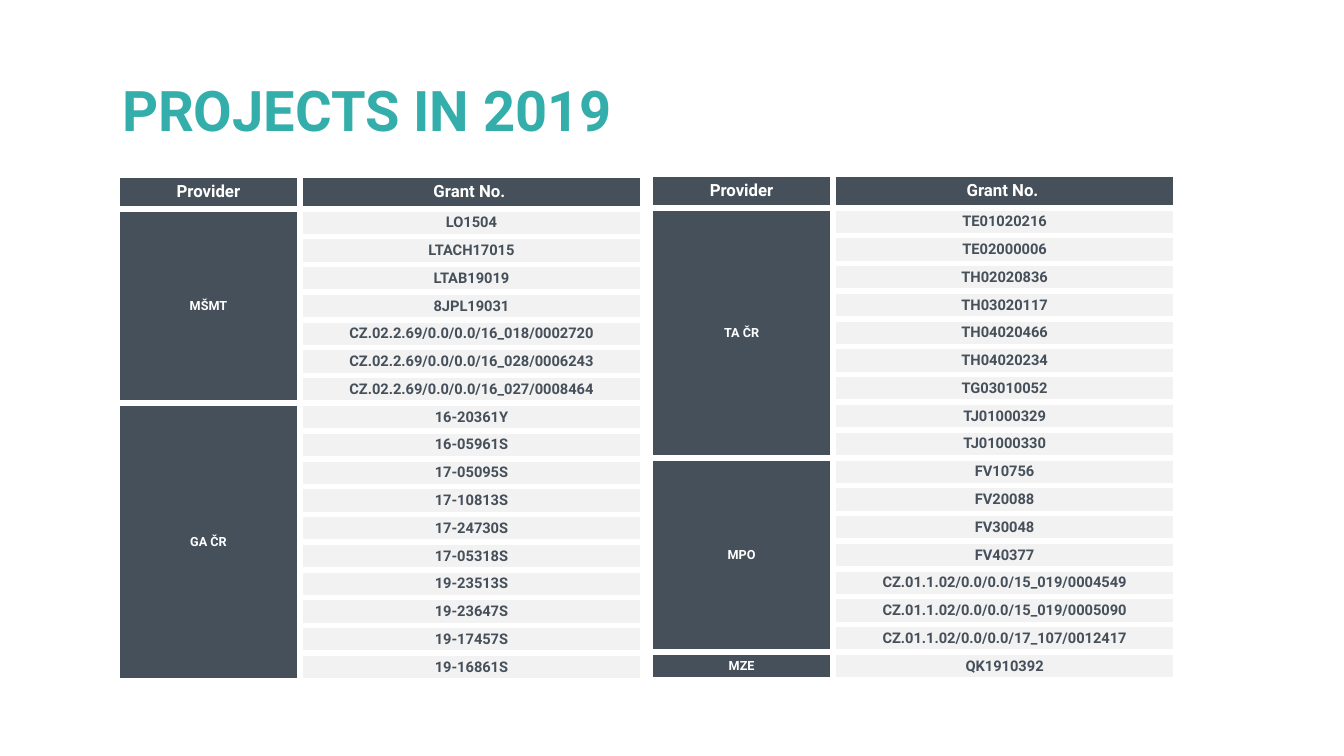
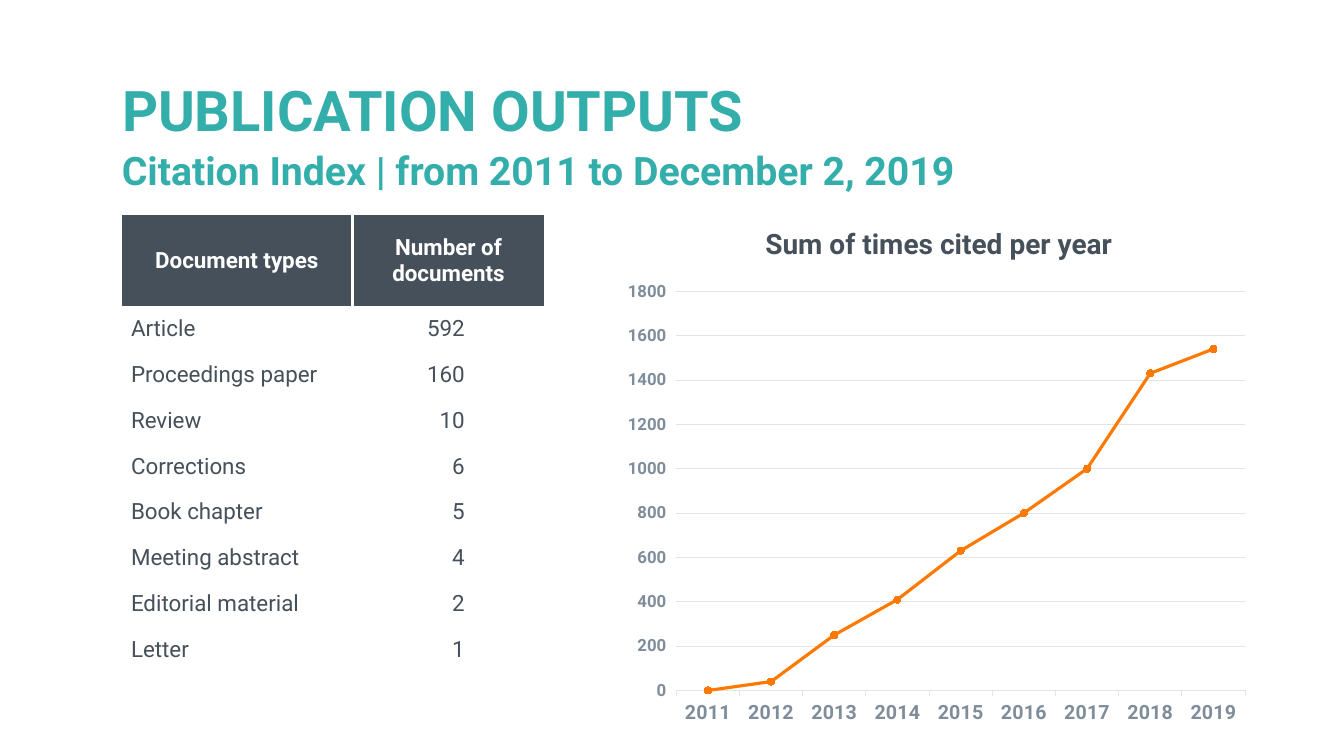
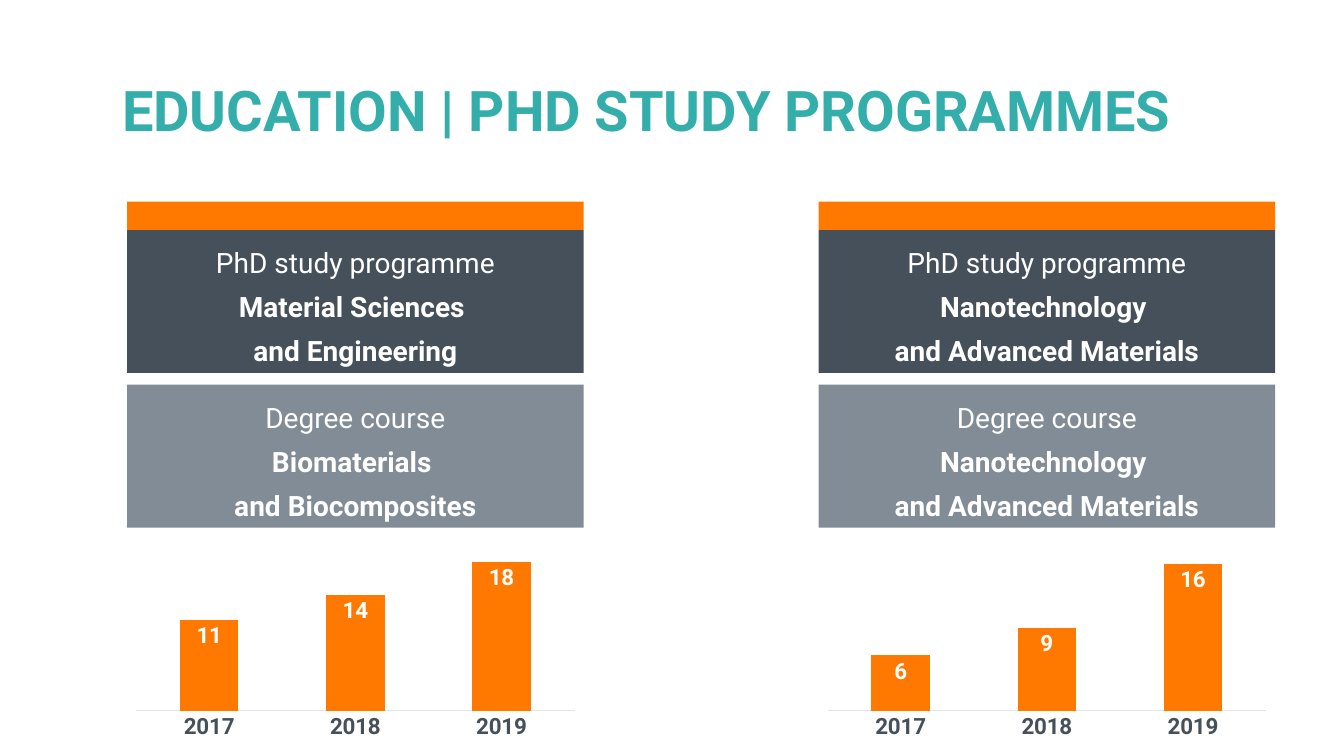
from dataclasses import dataclass
from typing import NamedTuple, Sequence

from lxml.etree import SubElement
from pptx import Presentation
from pptx.chart.data import CategoryChartData
from pptx.dml.color import RGBColor
from pptx.enum.chart import XL_CHART_TYPE as ChartType
from pptx.enum.chart import XL_LABEL_POSITION as LabelPosition
from pptx.enum.chart import XL_MARKER_STYLE as MarkerStyle
from pptx.enum.chart import XL_TICK_MARK as TickMark
from pptx.enum.shapes import MSO_SHAPE as Preset
from pptx.enum.text import MSO_ANCHOR as Anchor
from pptx.enum.text import MSO_AUTO_SIZE as AutoSize
from pptx.enum.text import PP_ALIGN as Align
from pptx.oxml.ns import qn
from pptx.util import Inches, Pt


@dataclass(frozen=True)
class Theme:
    """Colours and type sizes shared by all slides."""
    font: str = "Roboto"
    teal: str = "33AEAB"
    slate: str = "46505A"
    grey: str = "828C96"
    axis: str = "7F8D9B"
    rule: str = "E1E5E8"
    pale: str = "F2F2F2"
    white: str = "FFFFFF"
    orange: str = "FF7800"
    marker: str = "E65014"
    title: float = 40
    subtitle: float = 28
    heading: float = 20
    body: float = 16
    year: float = 14
    label: float = 12
    grant: float = 10.5
    chart: float = 10
    provider: float = 9


class Box(NamedTuple):
    """A place in percent of the slide's width and height."""
    left: float
    top: float
    width: float
    height: float


class Provider(NamedTuple):
    name: str
    grants: Sequence[str]


class GrantList(NamedTuple):
    left: float
    top: float
    providers: Sequence[Provider]


class Programme(NamedTuple):
    left: float
    study: str
    degree: str
    students: Sequence[int]


THEME = Theme()
SLIDE_W, SLIDE_H = Inches(13.33), Inches(7.5)
TITLE_BOX = Box(8.33, 5.33, 84.83, 19.33)

GRANT_LISTS = (
    GrantList(8.7, 23.2, (
        Provider("MŠMT", (
            "LO1504", "LTACH17015", "LTAB19019", "8JPL19031",
            "CZ.02.2.69/0.0/0.0/16_018/0002720",
            "CZ.02.2.69/0.0/0.0/16_028/0006243",
            "CZ.02.2.69/0.0/0.0/16_027/0008464")),
        Provider("GA ČR", (
            "16-20361Y", "16-05961S", "17-05095S", "17-10813S", "17-24730S",
            "17-05318S", "19-23513S", "19-23647S", "19-17457S", "19-16861S")),
    )),
    GrantList(48.37, 23.07, (
        Provider("TA ČR", (
            "TE01020216", "TE02000006", "TH02020836", "TH03020117", "TH04020466",
            "TH04020234", "TG03010052", "TJ01000329", "TJ01000330")),
        Provider("MPO", (
            "FV10756", "FV20088", "FV30048", "FV40377",
            "CZ.01.1.02/0.0/0.0/15_019/0004549",
            "CZ.01.1.02/0.0/0.0/15_019/0005090",
            "CZ.01.1.02/0.0/0.0/17_107/0012417")),
        Provider("MZE", ("QK1910392",)),
    )),
)

DOCUMENTS = (
    ("Article", 592), ("Proceedings paper", 160), ("Review", 10), ("Corrections", 6),
    ("Book chapter", 5), ("Meeting abstract", 4), ("Editorial material", 2), ("Letter", 1),
)
CITATIONS = (0, 40, 250, 410, 630, 800, 1000, 1430, 1540)

PROGRAMMES = (
    Programme(9.45, "Material Sciences \vand Engineering",
              "Biomaterials \vand Biocomposites", (11, 14, 18)),
    Programme(60.9, "Nanotechnology \vand Advanced Materials",
              "Nanotechnology \vand Advanced Materials", (6, 9, 16)),
)


# Shared helpers

def across(percent: float) -> int:
    return round(SLIDE_W * percent / 100)


def down(percent: float) -> int:
    return round(SLIDE_H * percent / 100)


def emu(box: Box) -> tuple:
    return across(box.left), down(box.top), across(box.width), down(box.height)


def style_font(font, size: float, color: str, bold: bool = False) -> None:
    font.name, font.size, font.bold = THEME.font, Pt(size), bold
    font.color.rgb = RGBColor.from_string(color)


def paint(fill, color: str) -> None:
    fill.solid()
    fill.fore_color.rgb = RGBColor.from_string(color)


def stroke(line, color: str, width: float) -> None:
    line.color.rgb = RGBColor.from_string(color)
    line.width = Pt(width)


def new_slide(deck, title: str):
    slide = deck.slides.add_slide(deck.slide_layouts[5])
    heading = slide.shapes.title
    heading.left, heading.top, heading.width, heading.height = emu(TITLE_BOX)
    frame = heading.text_frame
    frame.auto_size, frame.vertical_anchor = AutoSize.NONE, Anchor.MIDDLE
    frame.text = title
    line = frame.paragraphs[0]
    line.alignment, line.line_spacing = Align.LEFT, 0.9
    style_font(line.font, THEME.title, THEME.teal, True)
    return slide


def add_line(slide, box: Box, text: str, size: float, color: str, align) -> None:
    frame = slide.shapes.add_textbox(*emu(box)).text_frame
    frame.word_wrap, frame.vertical_anchor = True, Anchor.MIDDLE
    frame.text = text
    line = frame.paragraphs[0]
    line.alignment = align
    style_font(line.font, size, color, True)


def add_panel(slide, box: Box, color: str, lead: str = "", name: str = "") -> None:
    panel = slide.shapes.add_shape(Preset.RECTANGLE, *emu(box))
    panel.shadow.inherit = False
    paint(panel.fill, color)
    panel.line.fill.background()
    if not lead:
        return
    frame = panel.text_frame
    frame.word_wrap, frame.vertical_anchor = True, Anchor.MIDDLE
    for text, bold in ((lead, False), (name, True)):
        line = frame.paragraphs[0] if text == lead else frame.add_paragraph()
        line.text = text
        line.alignment, line.line_spacing = Align.CENTER, 1.3
        style_font(line.font, THEME.heading, THEME.white, bold)


# Tables

def add_grid(slide, box: Box, columns: Sequence[float], header: float, rows: int):
    """Add a table; columns are weights, header is a multiple of a body row."""
    grid = slide.shapes.add_table(rows + 1, len(columns), *emu(box)).table
    grid.first_row = grid.horz_banding = False
    for column, weight in zip(grid.columns, columns):
        column.width = across(box.width * weight / sum(columns))
    for index, row in enumerate(grid.rows):
        row.height = down(box.height * (1 if index else header) / (rows + header))
    return grid


def add_borders(cell, sides: str, width: float) -> None:
    for side in sides:
        edge = SubElement(cell._tc.get_or_add_tcPr(), qn(f"a:ln{side}"), w=str(Pt(width)))
        SubElement(SubElement(edge, qn("a:solidFill")), qn("a:srgbClr"), val=THEME.white)


def fill_cell(cell, text: str, size: float, color: str, fill: str,
              bold: bool = True, align=Align.CENTER) -> None:
    cell.text = text
    cell.vertical_anchor = Anchor.MIDDLE
    paint(cell.fill, fill)
    line = cell.text_frame.paragraphs[0]
    line.alignment = align
    style_font(line.font, size, color, bold)


def add_grant_table(slide, grants: GrantList) -> None:
    count = sum(len(provider.grants) for provider in grants.providers)
    grid = add_grid(slide, Box(grants.left, grants.top, 39.15, 66.93), (8, 15), 1.2, count)
    for cell in grid.iter_cells():
        add_borders(cell, "LRTB", 4.5)
        cell.margin_left = cell.margin_right = across(0.38)
        cell.margin_top = cell.margin_bottom = 0
    for column, text in enumerate(("Provider", "Grant No. ")):
        fill_cell(grid.cell(0, column), text, THEME.label, THEME.white, THEME.slate)
    first = 1
    for provider in grants.providers:
        last = first + len(provider.grants) - 1
        for row, grant in enumerate(provider.grants, first):
            fill_cell(grid.cell(row, 0), provider.name if row == first else "",
                      THEME.provider, THEME.white, THEME.slate)
            fill_cell(grid.cell(row, 1), grant, THEME.grant, THEME.slate, THEME.pale)
        if last > first:
            grid.cell(first, 0).merge(grid.cell(last, 0))
        first = last + 1


def add_document_table(slide) -> None:
    grid = add_grid(slide, Box(9, 28.4, 31.5, 60.53), (23, 19), 2, len(DOCUMENTS))
    for column, (text, side) in enumerate((("Document types", "R"), ("Number of documents", "L"))):
        add_borders(grid.cell(0, column), side, 2.25)
        fill_cell(grid.cell(0, column), text, THEME.body, THEME.white, THEME.slate)
    for row, (kind, number) in enumerate(DOCUMENTS, 1):
        fill_cell(grid.cell(row, 0), kind, THEME.body, THEME.slate, THEME.white,
                  False, Align.LEFT)
        fill_cell(grid.cell(row, 1), str(number), THEME.body, THEME.slate, THEME.white,
                  False, Align.RIGHT)
        grid.cell(row, 1).margin_right = across(5.92)


# Charts

def add_year_chart(slide, box: Box, kind, first_year: int, values: Sequence[int],
                   year_size: float, year_color: str):
    """Add a one-series chart over consecutive years."""
    numbers = CategoryChartData()
    numbers.categories = [str(first_year + step) for step in range(len(values))]
    numbers.add_series("Series 1", values)
    chart = slide.shapes.add_chart(kind, *emu(box), numbers).chart
    chart.has_legend = chart.has_title = False
    style_font(chart.font, THEME.chart, THEME.slate)
    chart.plots[0].vary_by_categories = False
    years = chart.category_axis
    style_font(years.tick_labels.font, year_size, year_color, True)
    stroke(years.format.line, THEME.rule, 0.75)
    return chart


def add_citation_chart(slide) -> None:
    chart = add_year_chart(slide, Box(45.75, 36, 47.85, 61.07), ChartType.LINE_MARKERS,
                           2011, CITATIONS, THEME.year, THEME.axis)
    chart.category_axis.major_tick_mark = TickMark.OUTSIDE
    scale = chart.value_axis
    scale.minimum_scale, scale.maximum_scale, scale.major_unit = 0, 1800, 200
    scale.major_tick_mark = TickMark.OUTSIDE
    scale.format.line.fill.background()
    stroke(scale.major_gridlines.format.line, THEME.rule, 0.75)
    style_font(scale.tick_labels.font, THEME.label, THEME.axis, True)
    cited = chart.plots[0].series[0]
    cited.smooth = False
    stroke(cited.format.line, THEME.orange, 2.25)
    cited.marker.style, cited.marker.size = MarkerStyle.CIRCLE, 5
    paint(cited.marker.format.fill, THEME.marker)
    cited.marker.format.line.fill.background()


def add_student_chart(slide, box: Box, students: Sequence[int]) -> None:
    chart = add_year_chart(slide, box, ChartType.COLUMN_CLUSTERED, 2017, students,
                           THEME.body, THEME.slate)
    chart.category_axis.major_tick_mark = TickMark.NONE
    chart.value_axis.visible = chart.value_axis.has_major_gridlines = False
    chart.value_axis.minimum_scale = 0
    bars = chart.plots[0]
    bars.gap_width, bars.overlap = 150, -25
    paint(bars.series[0].format.fill, THEME.orange)
    labels = bars.series[0].data_labels
    labels.show_value, labels.position = True, LabelPosition.INSIDE_END
    style_font(labels.font, THEME.body, THEME.white, True)


# Slides

def build_projects(deck) -> None:
    slide = new_slide(deck, "PROJECTS IN 2019")
    for grants in GRANT_LISTS:
        add_grant_table(slide, grants)


def build_publications(deck) -> None:
    slide = new_slide(deck, "PUBLICATION OUTPUTS")
    add_line(slide, Box(8.33, 18.67, 84.83, 7.6),
             "Citation Index | from 2011 to December 2, 2019",
             THEME.subtitle, THEME.teal, Align.LEFT)
    add_document_table(slide)
    add_citation_chart(slide)
    add_line(slide, Box(45.75, 28.4, 48.22, 7.6), "Sum of times cited per year",
             THEME.heading, THEME.slate, Align.CENTER)


def build_education(deck) -> None:
    slide = new_slide(deck, "EDUCATION | PHD STUDY PROGRAMMES")
    for programme in PROGRAMMES:
        def band(top: float, height: float) -> Box:
            return Box(programme.left, top, 33.98, height)

        add_panel(slide, band(30.4, 18.93), THEME.slate, "PhD study programme", programme.study)
        add_panel(slide, band(26.67, 3.73), THEME.orange)
        add_panel(slide, band(50.87, 18.93), THEME.grey, "Degree course", programme.degree)
        add_student_chart(slide, band(71.6, 26.8), programme.students)


def main() -> None:
    deck = Presentation()
    deck.slide_width, deck.slide_height = SLIDE_W, SLIDE_H
    for build in (build_projects, build_publications, build_education):
        build(deck)
    deck.save("out.pptx")


if __name__ == "__main__":
    main()
